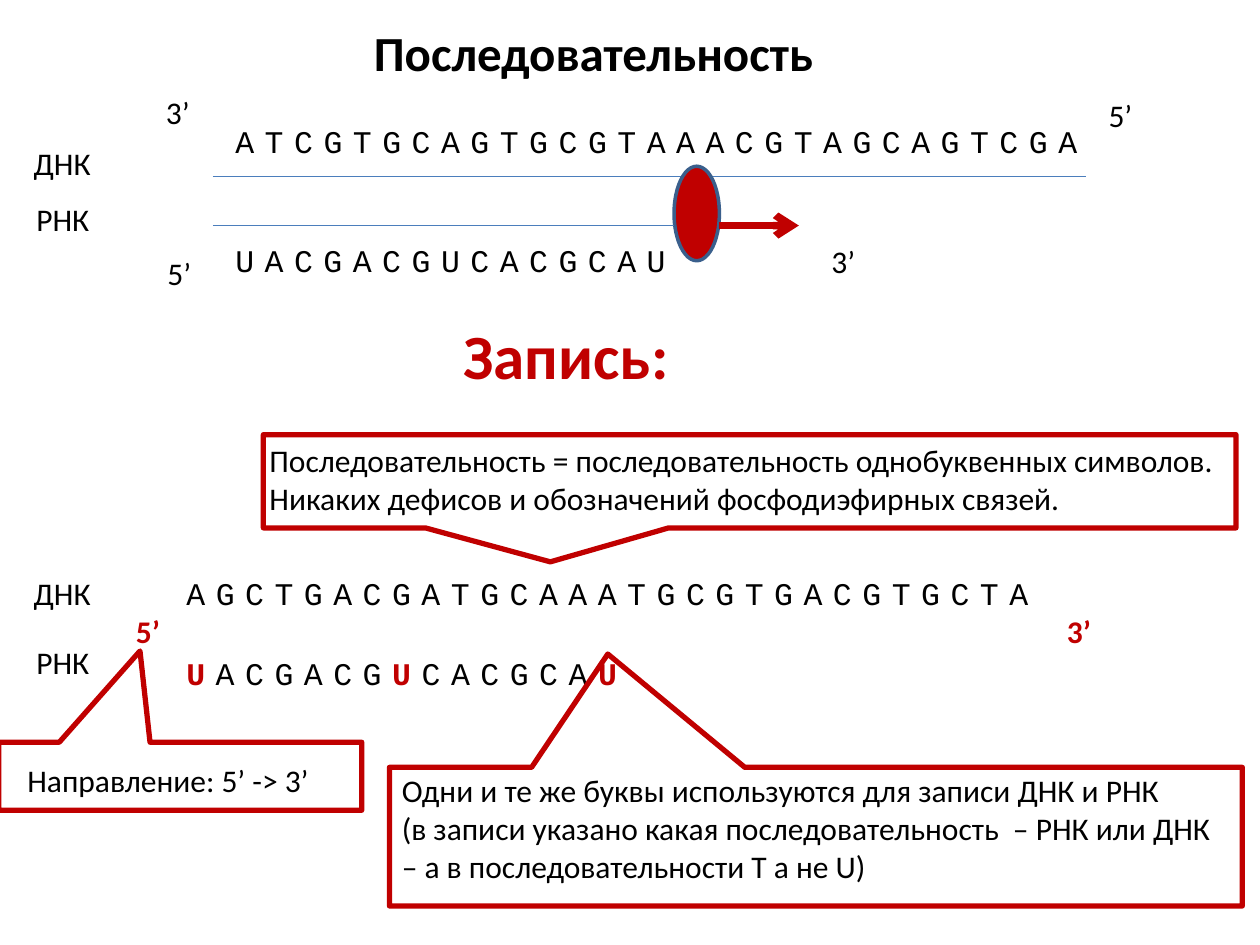
from lxml import etree
from pptx import Presentation
from pptx.dml.color import RGBColor
from pptx.enum.shapes import MSO_CONNECTOR, MSO_SHAPE
from pptx.enum.text import MSO_AUTO_SIZE
from pptx.oxml.ns import qn
from pptx.util import Pt

STRAIGHT = MSO_CONNECTOR.STRAIGHT
ELLIPSE = MSO_SHAPE.OVAL
CALLOUT = MSO_SHAPE.RECTANGULAR_CALLOUT
FIT = MSO_AUTO_SIZE.SHAPE_TO_FIT_TEXT

COLORS = {"text": "000000", "accent": "C00000", "strand": "4B7EBC", "outline": "3A5F8C"}
ROW_H = 29


def rgb(name):
    return RGBColor.from_string(COLORS[name])


def add_run(p, text, size=18, color="text", bold=False, font="Calibri", spacing=0):
    r = p.add_run()
    r.text = text
    r.font.name, r.font.size, r.font.bold = font, Pt(size), bold
    r.font.color.rgb = rgb(color)
    if spacing:
        r._r.get_or_add_rPr().set("spc", str(spacing * 100))


def add_box(shapes, x, y, w, h, wrap=True):
    tf = shapes.add_textbox(Pt(x), Pt(y), Pt(w), Pt(h)).text_frame
    tf.word_wrap = wrap
    tf.auto_size = FIT
    return tf


def add_label(shapes, text, x, y, w, h=ROW_H, wrap=True, **style):
    tf = add_box(shapes, x, y, w, h, wrap)
    add_run(tf.paragraphs[0], text, **style)


def add_sequence(shapes, x, y, w, *parts):
    """Spaced nucleotide letters; parts alternate between plain and highlighted."""
    p = add_box(shapes, x, y, w, ROW_H).paragraphs[0]
    for i, part in enumerate(parts):
        if part:
            marked = i % 2 == 1
            add_run(p, part, color="accent" if marked else "text", bold=marked,
                    font="Courier New", spacing=6)


def add_line(shapes, x1, x2, y, color="strand", width=0.75, arrow=False):
    line = shapes.add_connector(STRAIGHT, Pt(x1), Pt(y), Pt(x2), Pt(y))
    line.line.color.rgb = rgb(color)
    line.line.width = Pt(width)
    if arrow:
        etree.SubElement(line.line._get_or_add_ln(), qn("a:tailEnd"), type="arrow")
    etree.SubElement(line._element.spPr, qn("a:effectLst"))


def add_polymerase(shapes, x, y, w, h):
    sp = shapes.add_shape(ELLIPSE, Pt(x), Pt(y), Pt(w), Pt(h))
    sp.shadow.inherit = False
    sp.fill.solid()
    sp.fill.fore_color.rgb = rgb("accent")
    sp.line.color.rgb = rgb("outline")
    sp.line.width = Pt(2)


def add_callout(slide, frame, tip, text_box, rotation=0):
    """Grouped red callout frame with its text box; returns the text frame."""
    shapes = slide.shapes.add_group_shape().shapes
    sp = shapes.add_shape(CALLOUT, *map(Pt, frame))
    sp.shadow.inherit = False
    sp.rotation = rotation
    sp.adjustments[0], sp.adjustments[1] = tip
    sp.fill.background()
    sp.line.color.rgb = rgb("accent")
    sp.line.width = Pt(3)
    return add_box(shapes, *text_box)


def main():
    prs = Presentation()
    prs.slide_width, prs.slide_height = Pt(720), Pt(540)
    slide = prs.slides.add_slide(prs.slide_layouts[6])
    shapes = slide.shapes

    # Transcription scheme
    add_line(shapes, 121.7, 620.6, 100.8)
    add_sequence(shapes, 127.4, 66.2, 527, "ATCGTGCAGTGCGTAAACGTAGCAGTCGA")
    add_sequence(shapes, 127.4, 133.9, 515.5, "UACGACGUCACGCAU")
    for end, x, y in (("3’", 87.8, 49.7), ("5’", 626.4, 51.1),
                      ("5’", 88.6, 141.8), ("3’", 468, 134.6)):
        add_label(shapes, end, x, y, 33.8)
    add_polymerase(shapes, 385.2, 95, 25.9, 54)
    add_line(shapes, 121.7, 385.2, 128.9)
    add_line(shapes, 411.1, 456.5, 128.9, "accent", 4.25, arrow=True)

    # Strand names for both halves
    for name, x, y in (("ДНК", 12.2, 78.5), ("РНК", 13.7, 110.9),
                       ("ДНК", 12.2, 324.7), ("РНК", 13.7, 363.6)):
        add_label(shapes, name, x, y, 65)

    # Written notation
    add_label(shapes, "Запись:", 257.8, 177.1, 133.2, 51, size=36, color="accent", bold=True)
    add_sequence(shapes, 99.4, 324.7, 527, "AGCTGACGATGCAAATGCGTGACGTGCTA")
    add_sequence(shapes, 99.4, 370.1, 516.2, "", "U", "ACGACG", "U", "CACGCA", "U")
    for end, x in (("5’", 70.6), ("3’", 602.6)):
        add_label(shapes, end, x, 346.3, 29.5, color="accent", bold=True)

    # Callout: one-letter symbols
    tf = add_callout(slide, (150.5, 248.4, 555.8, 53.3), (-0.205, 0.864),
                     (110.9, 248.4, 595.4, 51))
    for i, text in enumerate((
            "Последовательность = последовательность однобуквенных символов.",
            "Никаких дефисов и обозначений фосфодиэфирных связей.")):
        p = tf.add_paragraph() if i else tf.paragraphs[0]
        p.level = 1
        pPr = p._p.get_or_add_pPr()
        pPr.set("marL", str(Pt(63)))
        pPr.set("indent", str(Pt(-27)))
        add_run(p, text)

    # Callout: shared letters
    tf = add_callout(slide, (222.5, 438.5, 487.4, 79.2), (0.244, 1.318),
                     (222.5, 437, 483.8, 72.7), 180)
    p = tf.paragraphs[0]
    add_run(p, "Одни и те же буквы используются для записи ДНК и РНК ")
    p.add_line_break()
    add_run(p, "(в записи указано какая последовательность  – РНК или ДНК"
               " – а в последовательности T а не U)")

    # Callout: direction
    tf = add_callout(slide, (-0.7, 424.1, 207.4, 38.9), (0.111, 1.841),
                     (8.6, 431.3, 182.9, ROW_H), 180)
    add_run(tf.paragraphs[0], "Направление: 5’ -> 3’")

    # Title
    add_label(shapes, "Последовательность", 206.6, 9.4, 268.6, 41, wrap=False,
              size=28, bold=True)

    prs.save("out.pptx")


if __name__ == "__main__":
    main()
